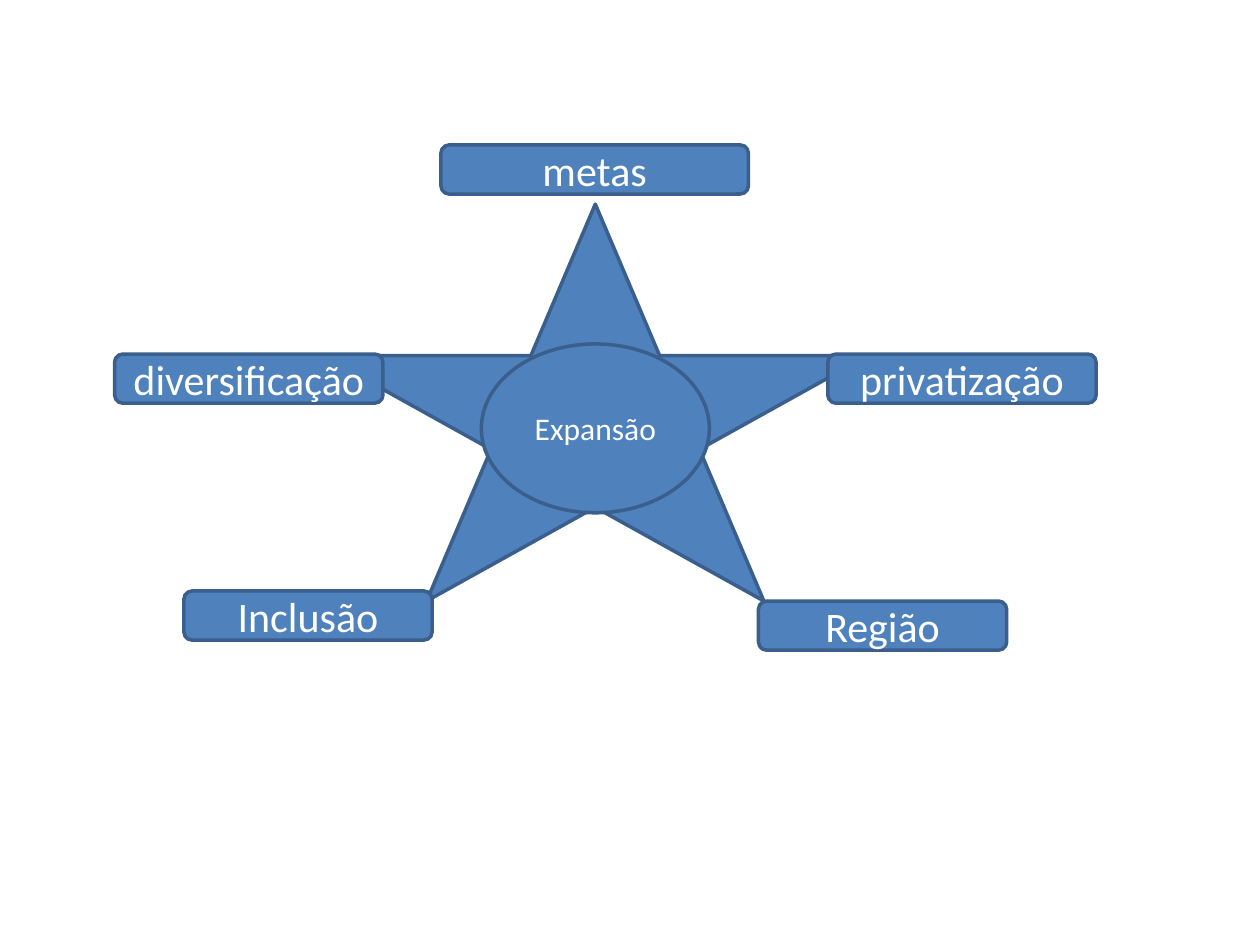
from dataclasses import dataclass

from pptx import Presentation
from pptx.dml.color import RGBColor
from pptx.enum.shapes import MSO_SHAPE
from pptx.enum.text import MSO_ANCHOR, PP_ALIGN
from pptx.util import Inches, Pt

COLOURS = {"fill": "4F81BD", "outline": "3A5F8C", "text": "FFFFFF"}
LABEL_HEIGHT = 0.39


@dataclass(frozen=True)
class Label:
    text: str
    left: float
    top: float
    width: float


# One label at each point of the star
LABELS = [
    Label("metas", 3.5, 1.15, 2.44),
    Label("privatização", 6.57, 2.81, 2.13),
    Label("Inclusão", 1.46, 4.69, 1.97),
    Label("Região", 6.02, 4.77, 1.97),
    Label("diversificação", 0.91, 2.81, 2.13),
]


def colour(name: str) -> RGBColor:
    return RGBColor.from_string(COLOURS[name])


def draw_shape(slide, kind: MSO_SHAPE, left: float, top: float, width: float,
               height: float, text: str = "", size: int = 24) -> None:
    shape = slide.shapes.add_shape(
        kind, Inches(left), Inches(top), Inches(width), Inches(height))
    shape.shadow.inherit = False
    shape.fill.solid()
    shape.fill.fore_color.rgb = colour("fill")
    shape.line.color.rgb = colour("outline")
    shape.line.width = Pt(2)
    if not text:
        return
    frame = shape.text_frame
    frame.word_wrap = True
    frame.vertical_anchor = MSO_ANCHOR.MIDDLE
    paragraph = frame.paragraphs[0]
    paragraph.alignment = PP_ALIGN.CENTER
    run = paragraph.add_run()
    run.text = text
    for attribute, value in {"name": "Calibri", "size": Pt(size)}.items():
        setattr(run.font, attribute, value)
    run.font.color.rgb = colour("text")


def main() -> None:
    presentation = Presentation()
    presentation.slide_width = Inches(10)
    presentation.slide_height = Inches(7.5)
    slide = presentation.slides.add_slide(presentation.slide_layouts[6])

    # Star with the central theme
    draw_shape(slide, MSO_SHAPE.STAR_5_POINT, 2.56, 1.62, 4.33, 3.15)
    draw_shape(slide, MSO_SHAPE.OVAL, 3.82, 2.73, 1.81, 1.34, "Expansão", 18)

    # Labels around the star
    for label in LABELS:
        draw_shape(slide, MSO_SHAPE.ROUNDED_RECTANGLE, label.left, label.top,
                   label.width, LABEL_HEIGHT, label.text)

    presentation.save("out.pptx")


if __name__ == "__main__":
    main()
